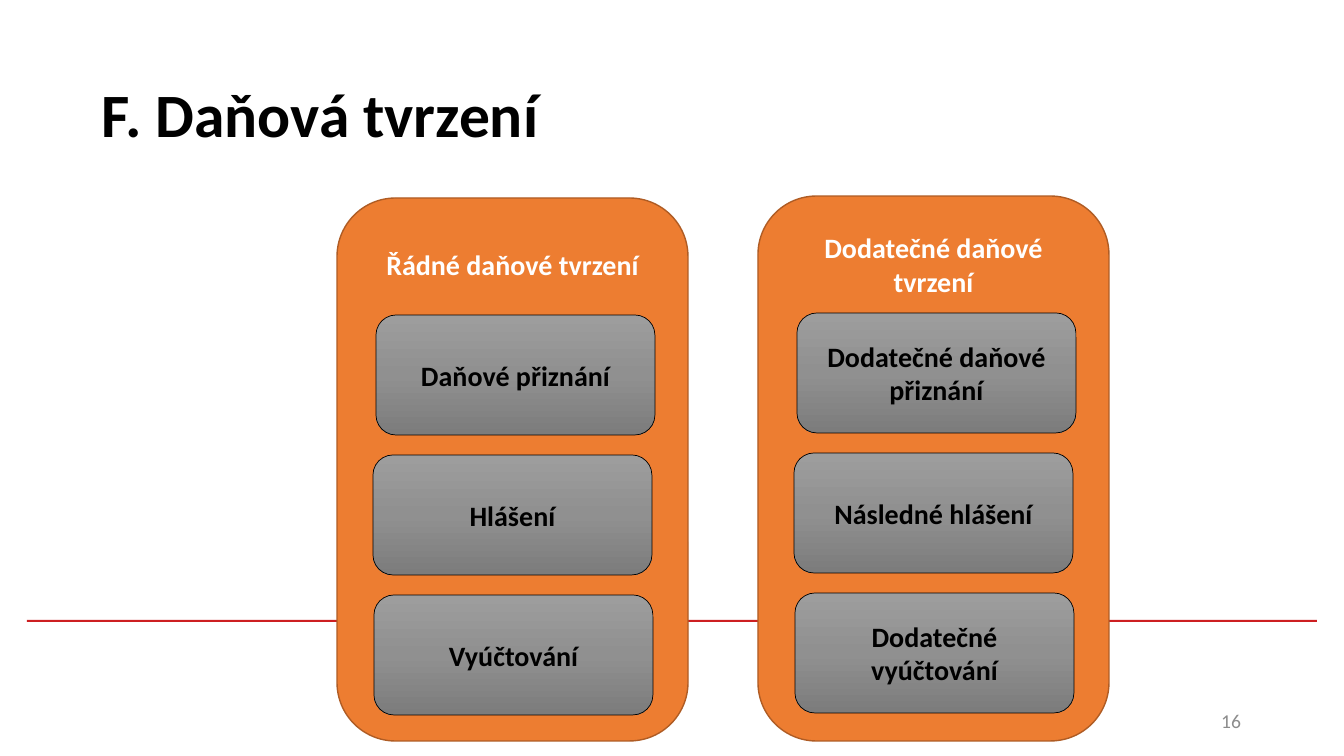
"""Build the slide on tax statements: two panels of three cards each."""
from copy import deepcopy
from pptx import Presentation
from pptx.dml.color import RGBColor as RGB
from pptx.enum.shapes import MSO_SHAPE as Shape
from pptx.enum.text import MSO_ANCHOR as Anchor, PP_ALIGN as Align
from pptx.util import Pt

TITLE = "F. Daňová tvrzení"
NUMBER = "16"
PANELS = [
    (337, 198, "Řádné daňové tvrzení",
     ["Daňové přiznání", "Hlášení", "Vyúčtování"]),
    (758, 196, "Dodatečné daňové tvrzení",
     ["Dodatečné daňové přiznání", "Následné hlášení", "Dodatečné vyúčtování"]),
]

BLACK = RGB(0x00, 0x00, 0x00)
WHITE = RGB(0xFF, 0xFF, 0xFF)
RED = RGB(0xCD, 0x1F, 0x21)
ORANGE = RGB(0xED, 0x7D, 0x31)
BROWN = RGB(0xAF, 0x5C, 0x24)
GRAY = RGB(0x8C, 0x8C, 0x8C)
SHADES = [RGB(0x9D, 0x9D, 0x9D), RGB(0x90, 0x90, 0x90), RGB(0x7C, 0x7C, 0x7C)]

FONT = "Calibri"
SCALE = 914400 / 100.8
PANEL_W, PANEL_END, HEAD_MID = 351, 741, 264
CARD_W, CARD_H, CARD_TOP, CARD_STEP = 279, 120, 117, 140
CARD_LEFT = [39, 36, 37]


def px(n):
    return round(n * SCALE)


def write(shape, text, size, color, align=Align.CENTER, bold=True):
    frame = shape.text_frame
    frame.word_wrap = True
    frame.vertical_anchor = Anchor.MIDDLE
    para = frame.paragraphs[0]
    para.alignment = align
    run = para.add_run()
    run.text = text
    font = run.font
    font.name, font.size, font.bold = FONT, Pt(size), bold
    font.color.rgb = color


def add_text(slide, box, *style):
    write(slide.shapes.add_textbox(*map(px, box)), *style)


def add_box(slide, kind, box, edge=None, width=0):
    shape = slide.shapes.add_shape(kind, *map(px, box))
    shape.shadow.inherit = False
    if edge is None:
        shape.line.fill.background()
    else:
        shape.line.color.rgb = edge
        shape.line.width = Pt(width)
    return shape


def paint(shape, color):
    shape.fill.solid()
    shape.fill.fore_color.rgb = color


def shade(shape):
    fill = shape.fill
    fill.gradient()
    fill.gradient_angle = 270
    stops = fill._fill._gradFill.gsLst
    stops.insert(1, deepcopy(stops[0]))
    for i, (stop, color) in enumerate(zip(fill.gradient_stops, SHADES)):
        stop.position = i / 2
        stop.color.rgb = color


def add_panel(slide, left, top, head, cards):
    box = left, top, PANEL_W, PANEL_END - top
    panel = add_box(slide, Shape.ROUNDED_RECTANGLE, box, BROWN, 1)
    paint(panel, ORANGE)
    write(panel, head, 20, WHITE)
    panel.text_frame.margin_top = 0
    panel.text_frame.margin_bottom = px(top + PANEL_END - 2 * HEAD_MID)
    for i, (shift, text) in enumerate(zip(CARD_LEFT, cards)):
        box = left + shift, top + CARD_TOP + i * CARD_STEP, CARD_W, CARD_H
        card = add_box(slide, Shape.ROUNDED_RECTANGLE, box, BLACK, 0.5)
        shade(card)
        write(card, text, 20, BLACK)


def main():
    deck = Presentation()
    deck.slide_width, deck.slide_height = px(1344), px(756)
    slide = deck.slides.add_slide(deck.slide_layouts[6])
    paint(add_box(slide, Shape.RECTANGLE, (27, 620, 1290, 2)), RED)
    add_text(slide, (92, 40, 1159, 146), TITLE, 44, BLACK, Align.LEFT)
    add_text(slide, (949, 701, 302, 40), NUMBER, 14, GRAY, Align.RIGHT, False)
    for panel in PANELS:
        add_panel(slide, *panel)
    deck.save("out.pptx")


if __name__ == "__main__":
    main()
